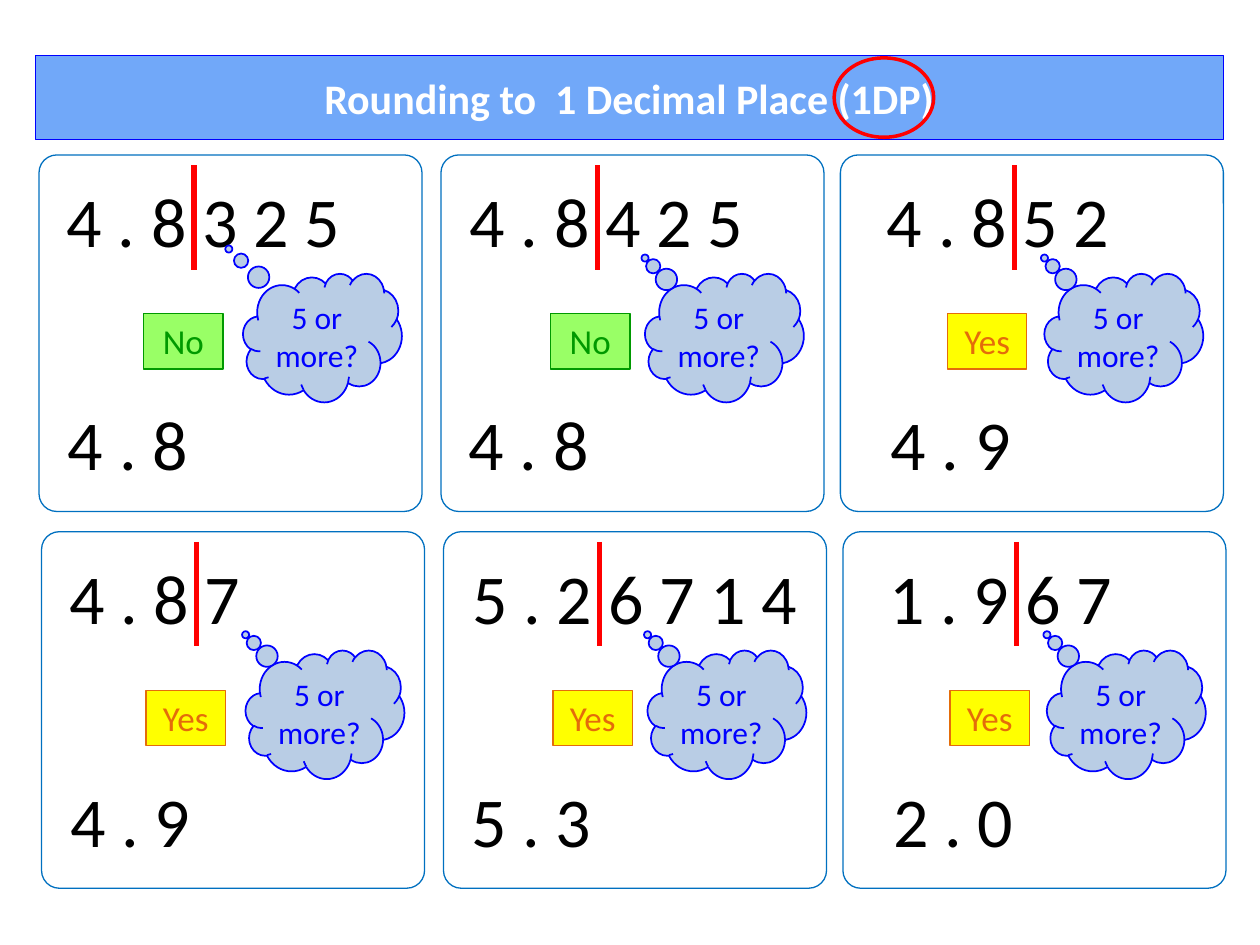
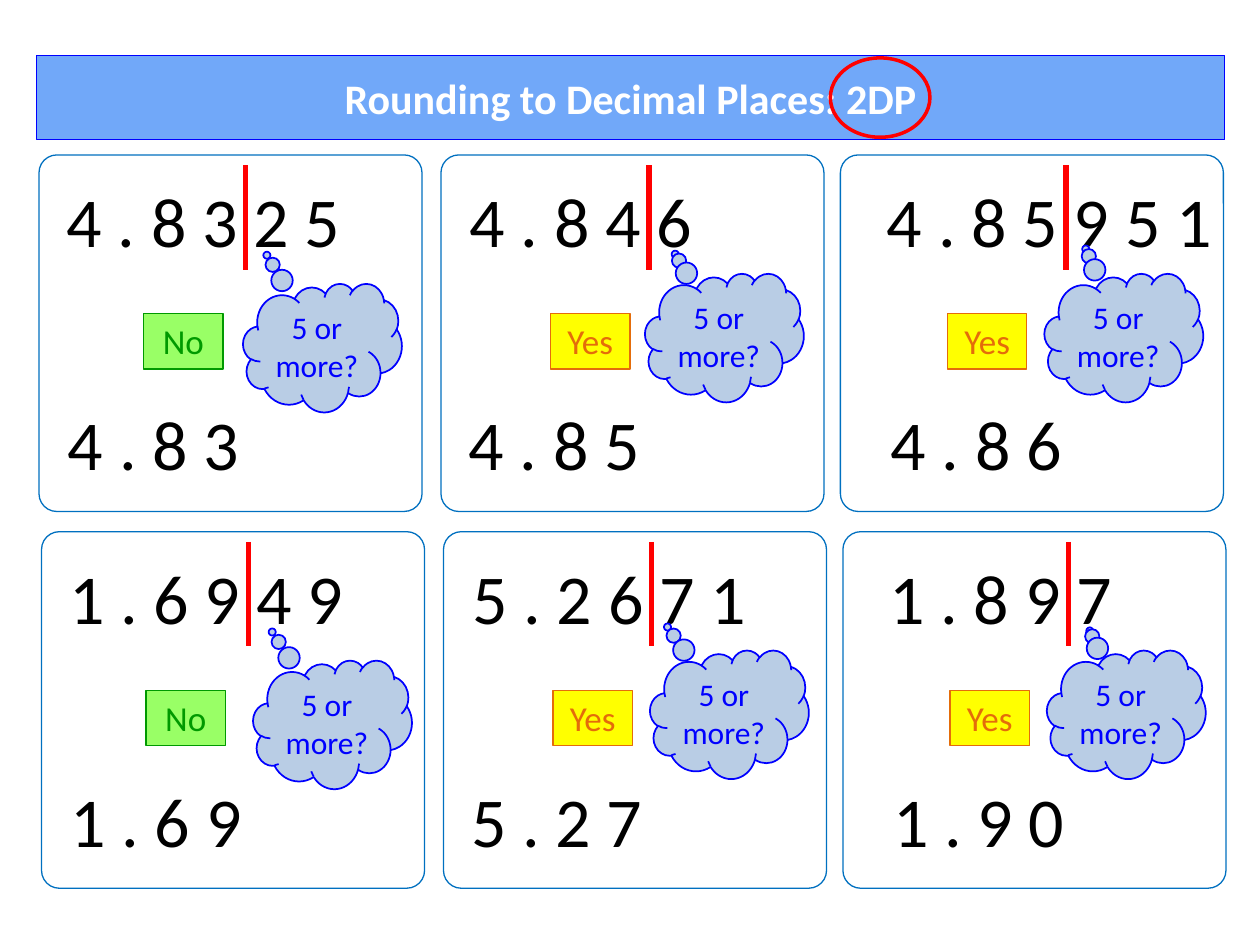
from lxml import etree
from pptx import Presentation
from pptx.dml.color import RGBColor
from pptx.enum.shapes import MSO_CONNECTOR, MSO_SHAPE
from pptx.enum.text import MSO_ANCHOR, MSO_AUTO_SIZE, PP_ALIGN
from pptx.oxml.ns import qn
from pptx.util import Inches, Pt

LEFT, CENTER = PP_ALIGN.LEFT, PP_ALIGN.CENTER
TOP, MIDDLE = MSO_ANCHOR.TOP, MSO_ANCHOR.MIDDLE
ROUNDED, RECT = MSO_SHAPE.ROUNDED_RECTANGLE, MSO_SHAPE.RECTANGLE
CLOUD, OVAL = MSO_SHAPE.CLOUD_CALLOUT, MSO_SHAPE.OVAL
STRAIGHT = MSO_CONNECTOR.STRAIGHT
FIXED = MSO_AUTO_SIZE.NONE

FONT = "Calibri"
BLACK = RGBColor(0x00, 0x00, 0x00)
WHITE = RGBColor(0xFF, 0xFF, 0xFF)
RED = RGBColor(0xFF, 0x00, 0x00)
BLUE = RGBColor(0x00, 0x00, 0xFF)
BAND = RGBColor(0x71, 0xA8, 0xF9)
PANEL_LINE = RGBColor(0x00, 0x70, 0xC0)
CLOUD_FILL = RGBColor(0xB9, 0xCD, 0xE5)
GREEN = RGBColor(0x00, 0x99, 0x00)
LIGHT_GREEN = RGBColor(0x99, 0xFF, 0x66)
ORANGE = RGBColor(0xE4, 0x6C, 0x0A)
YELLOW = RGBColor(0xFF, 0xFF, 0x00)
ANSWER_COLORS = {"No": (LIGHT_GREEN, GREEN), "Yes": (YELLOW, ORANGE)}

# Grid of panels; the other offsets are measured from a panel's corner
PANEL_X = [0.31, 3.50, 6.67]
PANEL_Y = 1.23
ROW_DX, ROW_DY = 0.02, 2.99
NUMBER_DX = [0.12, 0.13, 0.27]
RESULT_DX = [0.13, 0.12, 0.30]
ANSWER_DX = [0.83, 0.87, 0.85]
DIGIT_STEP = 0.41

# Each example: number, answer, result, cloud tail, cloud shift
SLIDES = [
    {"title": "Rounding to  1 Decimal Place (1DP)", "places": 1,
     "band_x": 0.28, "ring_x": 6.62,
     "examples": [
         ("4 . 8 3 2 5", "No", "4 . 8", (-0.59, -0.69), (0, 0)),
         ("4 . 8 4 2 5", "No", "4 . 8", (-0.50, -0.62), (0, 0)),
         ("4 . 8 5 2", "Yes", "4 . 9", (-0.50, -0.62), (0, 0)),
         ("4 . 8 7", "Yes", "4 . 9", (-0.50, -0.62), (0, 0)),
         ("5 . 2 6 7 1 4", "Yes", "5 . 3", (-0.50, -0.62), (0, 0)),
         ("1 . 9 6 7", "Yes", "2 . 0", (-0.50, -0.62), (0, 0))]},
    {"title": "Rounding to Decimal Places: 2DP", "places": 2,
     "band_x": 0.29, "ring_x": 6.59,
     "examples": [
         ("4 . 8 3 2 5", "No", "4 . 8 3", (-0.35, -0.72), (0, 0.08)),
         ("4 . 8 4 6", "Yes", "4 . 8 5", (-0.31, -0.65), (0, 0)),
         ("4 . 8 5 9 5 1", "Yes", "4 . 8 6", (-0.24, -0.69), (0, 0)),
         ("1 . 6 9 4 9", "No", "1 . 6 9", (-0.38, -0.72), (0.06, 0.08)),
         ("5 . 2 6 7 1", "Yes", "5 . 2 7", (-0.39, -0.68), (0.02, 0)),
         ("1 . 8 9 7", "Yes", "1 . 9 0", (-0.23, -0.65), (0, 0))]},
]


def write(sp, text, size, color, align=LEFT, anchor=TOP, bold=False, margins=None):
    tf = sp.text_frame
    tf.word_wrap = True
    tf.auto_size = FIXED
    tf.vertical_anchor = anchor
    if margins:
        tf.margin_left, tf.margin_top, tf.margin_right, tf.margin_bottom = map(Inches, margins)
    p = tf.paragraphs[0]
    p.alignment = align
    r = p.add_run()
    r.text = text
    r.font.name, r.font.size, r.font.bold = FONT, Pt(size), bold
    r.font.color.rgb = color


def add_shape(s, kind, box, line, width, fill=None, adjust=()):
    sp = s.shapes.add_shape(kind, *map(Inches, box))
    sp.shadow.inherit = False
    sp.line.color.rgb, sp.line.width = line, Pt(width)
    if fill is None:
        sp.fill.background()
    else:
        sp.fill.solid()
        sp.fill.fore_color.rgb = fill
    for i, value in enumerate(adjust):
        sp.adjustments[i] = value
    return sp


prs = Presentation()
prs.slide_width, prs.slide_height = Inches(10), Inches(7.5)

for page in SLIDES:
    s = prs.slides.add_slide(prs.slide_layouts[5])

    # Title band: the title placeholder with a rounded outline
    title = s.shapes.title
    title.left, title.top = Inches(page["band_x"]), Inches(0.44)
    title.width, title.height = Inches(9.43), Inches(0.67)
    geom = etree.SubElement(title.element.spPr, qn("a:prstGeom"), prst="roundRect")
    guides = etree.SubElement(geom, qn("a:avLst"))
    etree.SubElement(guides, qn("a:gd"), name="adj", fmla="val 21100")
    title.fill.solid()
    title.fill.fore_color.rgb = BAND
    title.line.color.rgb, title.line.width = BLUE, Pt(0.75)
    write(title, page["title"], 24, WHITE, align=CENTER, anchor=MIDDLE, bold=True)

    for i, (number, answer, result, tail, shift) in enumerate(page["examples"]):
        row, col = divmod(i, 3)
        x = PANEL_X[col] + row * ROW_DX
        y = PANEL_Y + row * ROW_DY

        # Panel with the number and its rounded result
        add_shape(s, ROUNDED, (x, y, 3.04, 2.83), PANEL_LINE, 0.75, adjust=[0.05])
        for text, dx, dy in ((number, NUMBER_DX[col], 0.13), (result, RESULT_DX[col], 1.90)):
            sp = s.shapes.add_textbox(Inches(x + dx), Inches(y + dy), Inches(2.93), Inches(0.77))
            write(sp, text, 40, BLACK)

        # Cut after the last digit that is kept
        cut_x = Inches(x + NUMBER_DX[col] + 0.7 + page["places"] * DIGIT_STEP)
        cut = s.shapes.add_connector(STRAIGHT, cut_x, Inches(y + 0.08), cut_x, Inches(y + 0.91))
        cut.line.color.rgb, cut.line.width = RED, Pt(3)
        etree.SubElement(cut.element.spPr, qn("a:effectLst"))

        # Answer box
        fill, color = ANSWER_COLORS[answer]
        sp = add_shape(s, RECT, (x + ANSWER_DX[col], y + 1.26, 0.63, 0.44), color, 0.75, fill)
        write(sp, answer, 20, color, align=CENTER)

        # Question cloud pointing at the deciding digit
        sp = add_shape(s, CLOUD, (x + 1.62 + shift[0], y + 0.94 + shift[1], 1.26, 1.02),
                       BLUE, 1, CLOUD_FILL, tail)
        write(sp, "5 or more?", 18, BLUE, align=CENTER, anchor=MIDDLE, margins=(0, 0.02, 0, 0))

    # Ring around the number of places
    add_shape(s, OVAL, (page["ring_x"], 0.46, 0.79, 0.63), RED, 2)

prs.save("out.pptx")
